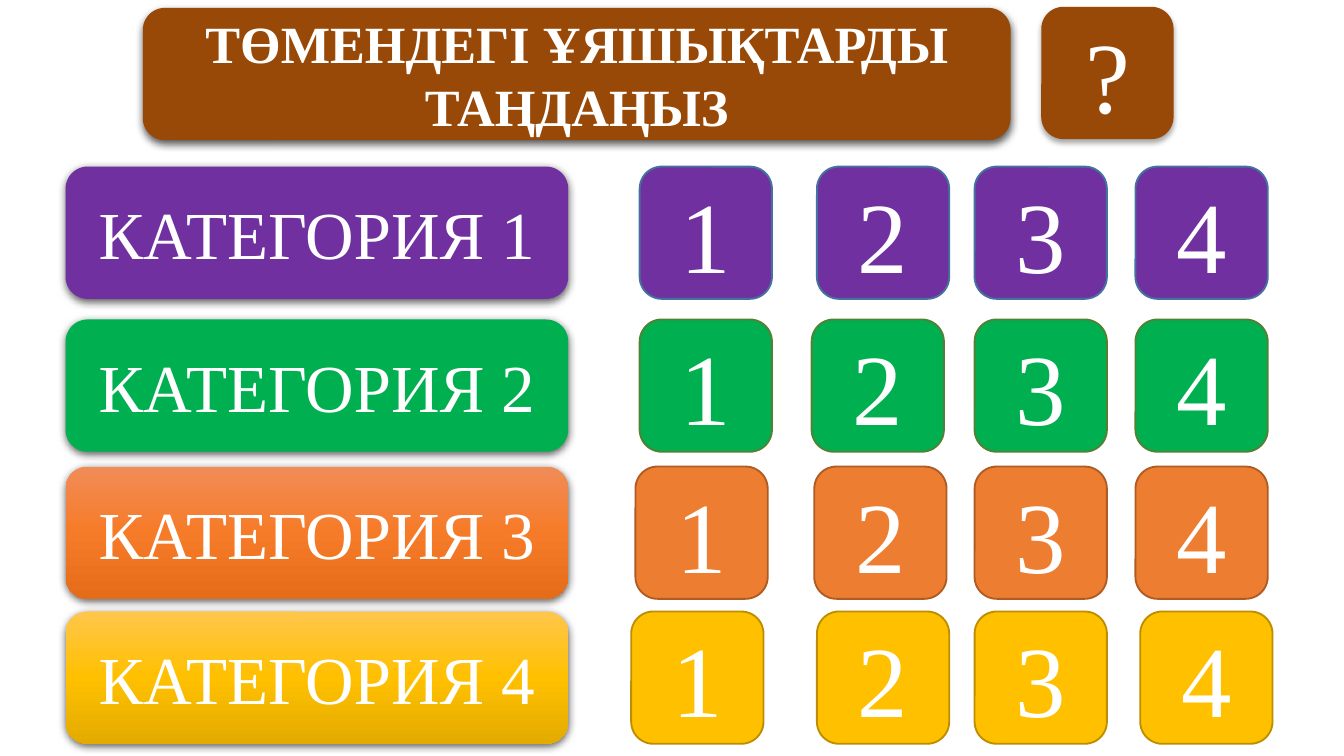
from copy import deepcopy
from typing import NamedTuple, Optional

from lxml.etree import SubElement
from pptx import Presentation
from pptx.dml.color import RGBColor
from pptx.enum.shapes import MSO_SHAPE
from pptx.enum.text import MSO_ANCHOR, PP_ALIGN
from pptx.oxml.ns import qn
from pptx.util import Cm, Pt

COLORS = {
    "white": "FFFFFF",
    "black": "000000",
    "brown": "984807",
    "purple": "7030A0",
    "purple_edge": "43739E",
    "green": "00B050",
    "green_edge": "538035",
    "orange": "ED7D31",
    "orange_edge": "AF5C24",
    "orange_light": "F18C57",
    "orange_bright": "F67B28",
    "orange_dark": "E56C19",
    "gold": "FFC000",
    "gold_edge": "BD8E00",
    "gold_light": "FFC64B",
    "gold_dark": "E3AB00",
}
TILE_SIZE = 2.5
CATEGORY_LEFT = 1.24
CATEGORY_WIDTH = 9.5


class Shadow(NamedTuple):
    opacity: int
    blur: float
    distance: float


class Box(NamedTuple):
    left: float
    top: float
    width: float = TILE_SIZE
    preset: MSO_SHAPE = MSO_SHAPE.ROUNDED_RECTANGLE


class Category(NamedTuple):
    top: float
    tile_lefts: tuple[float, ...]
    color: str
    edge: str
    label_fill: tuple[str, ...]


DEEP_SHADOW = Shadow(63, 4.5, 1.5)
SOFT_SHADOW = Shadow(35, 3.1, 1.8)

CATEGORIES = [
    Category(3.15, (12.09, 15.44, 18.42, 21.46), "purple", "purple_edge", ("purple",)),
    Category(6.04, (12.09, 15.34, 18.42, 21.46), "green", "green_edge", ("green",)),
    Category(8.82, (12.01, 15.39, 18.42, 21.46), "orange", "orange_edge",
             ("orange_light", "orange_bright", "orange_dark")),
    Category(11.56, (11.93, 15.44, 18.42, 21.55), "gold", "gold_edge",
             ("gold_light", "gold", "gold_dark")),
]


def rgb(name: str) -> RGBColor:
    return RGBColor.from_string(COLORS[name])


def fill_shape(shape, names: tuple[str, ...]) -> None:
    if len(names) == 1:
        shape.fill.solid()
        shape.fill.fore_color.rgb = rgb(names[0])
        return
    shape.fill.gradient()
    shape.fill.gradient_angle = 270
    stop_list = shape._element.spPr.find(qn("a:gradFill")).find(qn("a:gsLst"))
    while len(stop_list) < len(names):
        stop_list.append(deepcopy(stop_list[0]))
    for index, (stop, name) in enumerate(zip(shape.fill.gradient_stops, names)):
        stop.position = index / (len(names) - 1)
        stop.color.rgb = rgb(name)


def cast_shadow(shape, shadow: Shadow) -> None:
    effects = shape._element.spPr.find(qn("a:effectLst"))
    outer = SubElement(
        effects, qn("a:outerShdw"), blurRad=str(Pt(shadow.blur)),
        dist=str(Pt(shadow.distance)), dir="5400000", algn="ctr", rotWithShape="0",
    )
    tint = SubElement(outer, qn("a:srgbClr"), val=COLORS["black"])
    SubElement(tint, qn("a:alpha"), val=str(shadow.opacity * 1000))


def write_text(shape, text: str, *, size: int, bold: bool = False) -> None:
    frame = shape.text_frame
    frame.word_wrap = True
    frame.vertical_anchor = MSO_ANCHOR.MIDDLE
    paragraph = frame.paragraphs[0]
    paragraph.alignment = PP_ALIGN.CENTER
    run = paragraph.add_run()
    run.text = text
    run.font.name = "Times New Roman"
    run.font.size = Pt(size)
    run.font.bold = bold
    run.font.color.rgb = rgb("white")


def draw_box(slide, box: Box, fill: tuple[str, ...], text: str, *, size: int,
             bold: bool = False, edge: Optional[str] = None,
             shadow: Optional[Shadow] = None) -> None:
    shape = slide.shapes.add_shape(
        box.preset, Cm(box.left), Cm(box.top), Cm(box.width), Cm(TILE_SIZE)
    )
    shape.shadow.inherit = False
    fill_shape(shape, fill)
    if edge:
        shape.line.color.rgb = rgb(edge)
        shape.line.width = Pt(1)
    else:
        shape.line.fill.background()
    if shadow:
        cast_shadow(shape, shadow)
    write_text(shape, text, size=size, bold=bold)


def draw_category(slide, number: int, category: Category) -> None:
    draw_box(slide, Box(CATEGORY_LEFT, category.top, CATEGORY_WIDTH), category.label_fill,
             f"КАТЕГОРИЯ {number}", size=36, shadow=DEEP_SHADOW)
    for question, left in enumerate(category.tile_lefts, start=1):
        draw_box(slide, Box(left, category.top), (category.color,),
                 str(question), size=54, edge=category.edge)


def main() -> None:
    presentation = Presentation()
    presentation.slide_width = Cm(25.4)
    presentation.slide_height = Cm(14.29)
    slide = presentation.slides.add_slide(presentation.slide_layouts[6])

    for number, category in enumerate(CATEGORIES, start=1):
        draw_category(slide, number, category)

    draw_box(slide, Box(2.7, 0.15, 16.4, MSO_SHAPE.FLOWCHART_ALTERNATE_PROCESS), ("brown",),
             "ТӨМЕНДЕГІ ҰЯШЫҚТАРДЫ ТАҢДАҢЫЗ", size=28, bold=True, shadow=DEEP_SHADOW)
    draw_box(slide, Box(19.68, 0.13), ("brown",), "?", size=54, shadow=SOFT_SHADOW)

    presentation.save("out.pptx")


if __name__ == "__main__":
    main()
